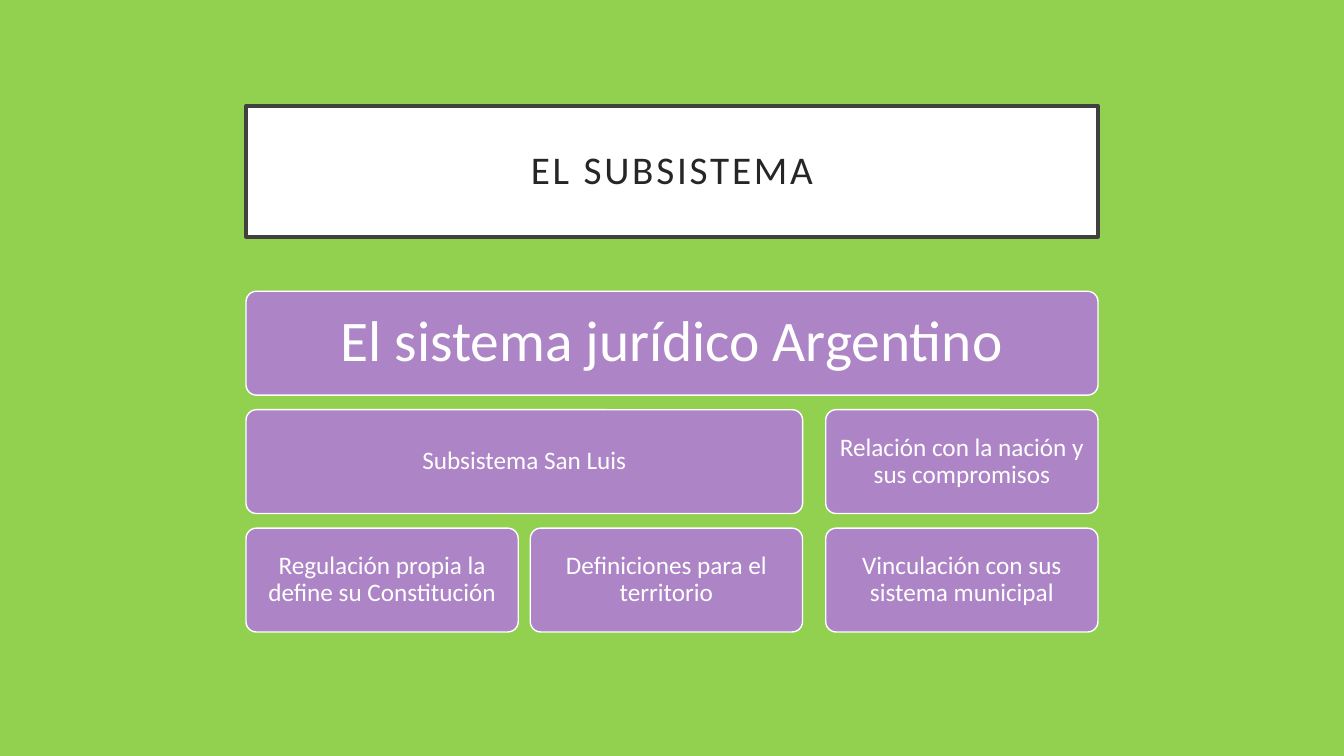
from pptx import Presentation
from pptx.dml.color import RGBColor
from pptx.enum.shapes import MSO_SHAPE
from pptx.enum.text import MSO_ANCHOR, PP_ALIGN
from pptx.util import Inches, Pt

GREEN = RGBColor(0x92, 0xD0, 0x50)
PURPLE = RGBColor(0xAD, 0x84, 0xC6)
WHITE = RGBColor(0xFF, 0xFF, 0xFF)
CHARCOAL = RGBColor(0x40, 0x40, 0x40)
INK = RGBColor(0x26, 0x26, 0x26)

LEFT, WIDTH = 2.44, 8.45
CELL_WIDTH, CELL_HEIGHT = 2.7, 1.03
SIBLING_GAP, BRANCH_GAP, ROW_GAP = 0.12, 0.23, 0.145

# text, row, first column, columns spanned, text size, inset
HIERARCHY = [
    ("El sistema jurídico Argentino", 0, 0, 3, 41, 0.17),
    ("Subsistema San Luis", 1, 0, 2, 18, 0.07),
    ("Regulación propia la define su Constitución", 2, 0, 1, 18, 0.07),
    ("Definiciones para el territorio", 2, 1, 1, 18, 0.07),
    ("Relación con la nación y sus compromisos", 1, 2, 1, 18, 0.07),
    ("Vinculación con sus sistema municipal", 2, 2, 1, 18, 0.07),
]


def add_panel(slide, preset, box, text, size, inset, fill, line, line_width, ink):
    """Add a filled, outlined shape with centred text; box is in inches."""
    panel = slide.shapes.add_shape(preset, *(Inches(length) for length in box))
    panel.shadow.inherit = False
    panel.fill.solid()
    panel.fill.fore_color.rgb = fill
    panel.line.color.rgb = line
    panel.line.width = Pt(line_width)

    frame = panel.text_frame
    frame.word_wrap = True
    frame.vertical_anchor = MSO_ANCHOR.MIDDLE
    frame.margin_left = frame.margin_right = Inches(inset)
    frame.margin_top = frame.margin_bottom = Inches(inset)
    frame.text = text
    paragraph = frame.paragraphs[0]
    paragraph.alignment = PP_ALIGN.CENTER
    paragraph.line_spacing = 0.9
    font = paragraph.runs[0].font
    font.name = "Calibri"
    font.size = Pt(size)
    font.color.rgb = ink
    return panel


def add_title(slide, box):
    title = add_panel(slide, MSO_SHAPE.RECTANGLE, box, "EL SUBSISTEMA",
                      28, 0.2, WHITE, CHARCOAL, 2.5, INK)
    run = title.text_frame.paragraphs[0].runs[0]
    run.font._element.set("spc", "200")


def add_hierarchy(slide, left, top):
    """Place the boxes on a grid of three columns and three rows."""
    second = left + CELL_WIDTH + SIBLING_GAP
    columns = [left, second, second + CELL_WIDTH + BRANCH_GAP]
    for text, row, first, span, size, inset in HIERARCHY:
        width = columns[first + span - 1] + CELL_WIDTH - columns[first]
        box = (columns[first], top + row * (CELL_HEIGHT + ROW_GAP),
               width, CELL_HEIGHT)
        cell = add_panel(slide, MSO_SHAPE.ROUNDED_RECTANGLE, box, text,
                         size, inset, PURPLE, WHITE, 1, WHITE)
        cell.adjustments[0] = 0.1


def main():
    presentation = Presentation()
    presentation.slide_width = Inches(13.33)
    presentation.slide_height = Inches(7.5)
    slide = presentation.slides.add_slide(presentation.slide_layouts[6])
    slide.background.fill.solid()
    slide.background.fill.fore_color.rgb = GREEN
    add_title(slide, (LEFT, 1.05, WIDTH, 1.3))
    add_hierarchy(slide, LEFT, 2.89)
    presentation.save("out.pptx")


if __name__ == "__main__":
    main()
